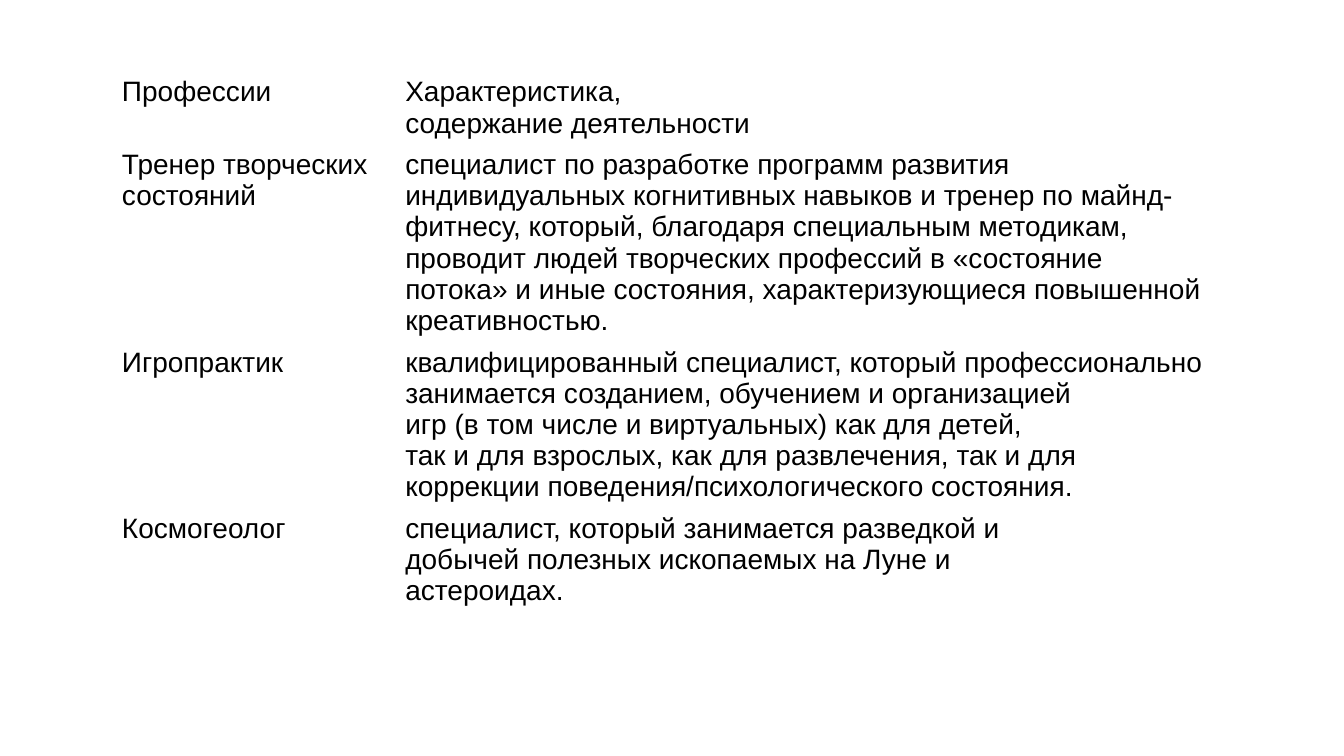
from typing import NamedTuple

from pptx import Presentation
from pptx.dml.color import RGBColor
from pptx.table import _Cell as Cell
from pptx.util import Inches, Pt

BLACK = "000000"
TEXT_FORMAT = {"name": "Arial", "size": Pt(20), "bold": False}
COLUMN_WIDTHS = (2.81, 8.17)


class Profession(NamedTuple):
    title: str
    description: list[str]
    min_height: float = 0.41


PROFESSIONS = [
    Profession("Профессии", ["Характеристика,", "содержание деятельности"]),
    Profession(
        "Тренер творческих состояний",
        ["специалист по разработке программ развития индивидуальных "
         "когнитивных навыков и тренер по майнд-фитнесу, который, "
         "благодаря специальным методикам, проводит людей творческих профессий "
         "в «состояние потока» и иные состояния, характеризующиеся "
         "повышенной креативностью."],
        min_height=0.43,
    ),
    Profession(
        "Игропрактик",
        ["квалифицированный специалист, который профессионально занимается "
         "созданием, обучением и организацией",
         "игр (в том числе и виртуальных) как для детей,",
         "так и для взрослых, как для развлечения, так и для коррекции "
         "поведения/психологического состояния."],
    ),
    Profession(
        "Космогеолог",
        ["специалист, который занимается разведкой и",
         "добычей полезных ископаемых на Луне и",
         "астероидах."],
    ),
]


def color(value: str) -> RGBColor:
    return RGBColor.from_string(value)


def write_cell(cell: Cell, lines: list[str]) -> None:
    cell.fill.background()
    cell.text_frame.text = "\n".join(lines)
    for paragraph in cell.text_frame.paragraphs:
        for run in paragraph.runs:
            for attribute, value in TEXT_FORMAT.items():
                setattr(run.font, attribute, value)
            run.font.color.rgb = color(BLACK)


def main() -> None:
    deck = Presentation()
    deck.slide_width, deck.slide_height = Inches(13.33), Inches(7.5)
    slide = deck.slides.add_slide(deck.slide_layouts[6])

    # Table of professions, plain and unbanded
    professions = slide.shapes.add_table(
        len(PROFESSIONS), len(COLUMN_WIDTHS),
        Inches(1.11), Inches(0.71), Inches(sum(COLUMN_WIDTHS)), Inches(1.66),
    ).table
    professions.first_row = professions.horz_banding = False
    for column, width in zip(professions.columns, COLUMN_WIDTHS):
        column.width = Inches(width)

    # Rows grow with their text
    for row, profession in zip(professions.rows, PROFESSIONS):
        row.height = Inches(profession.min_height)
        title, description = row.cells
        write_cell(title, [profession.title])
        write_cell(description, profession.description)

    deck.save("out.pptx")


if __name__ == "__main__":
    main()
